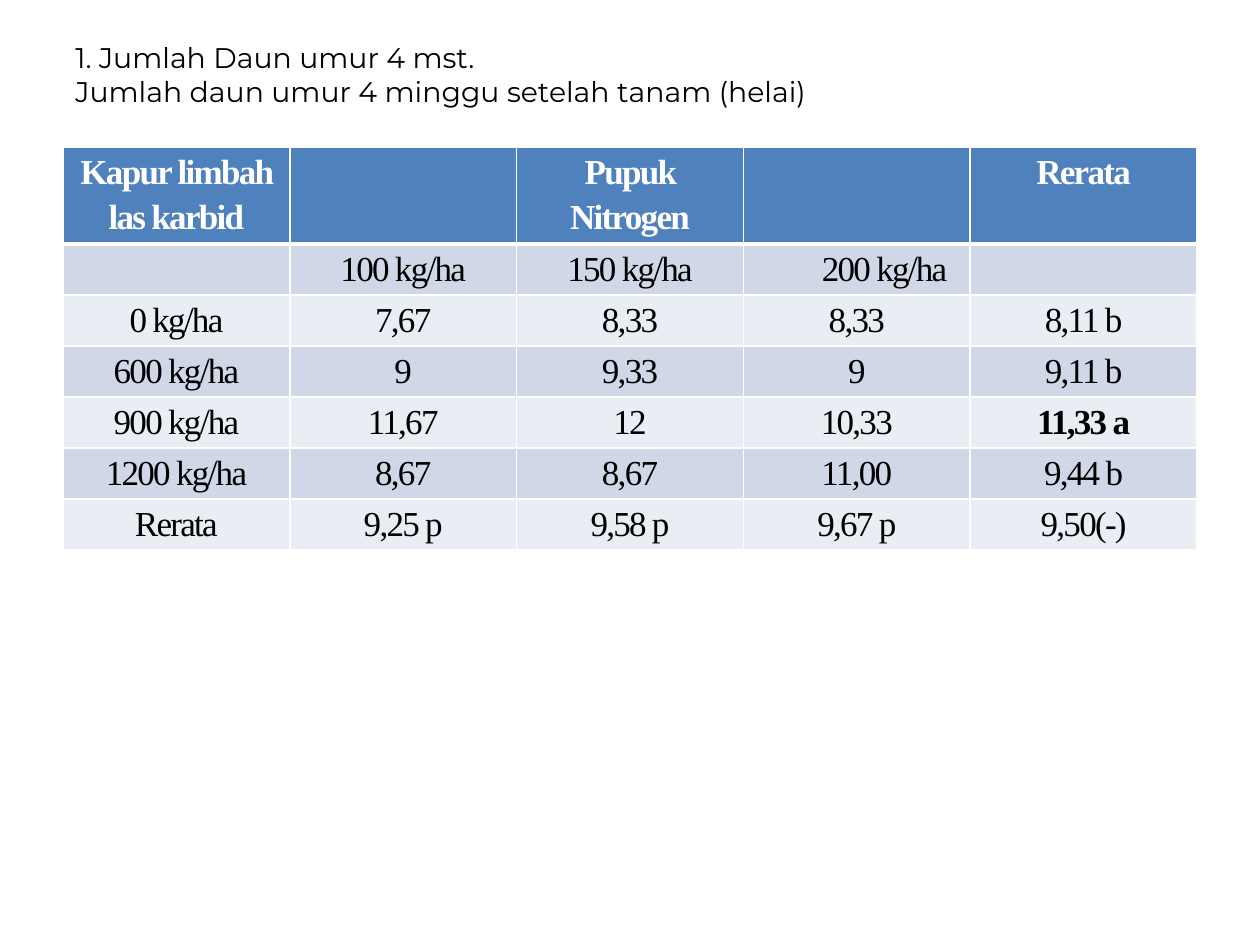
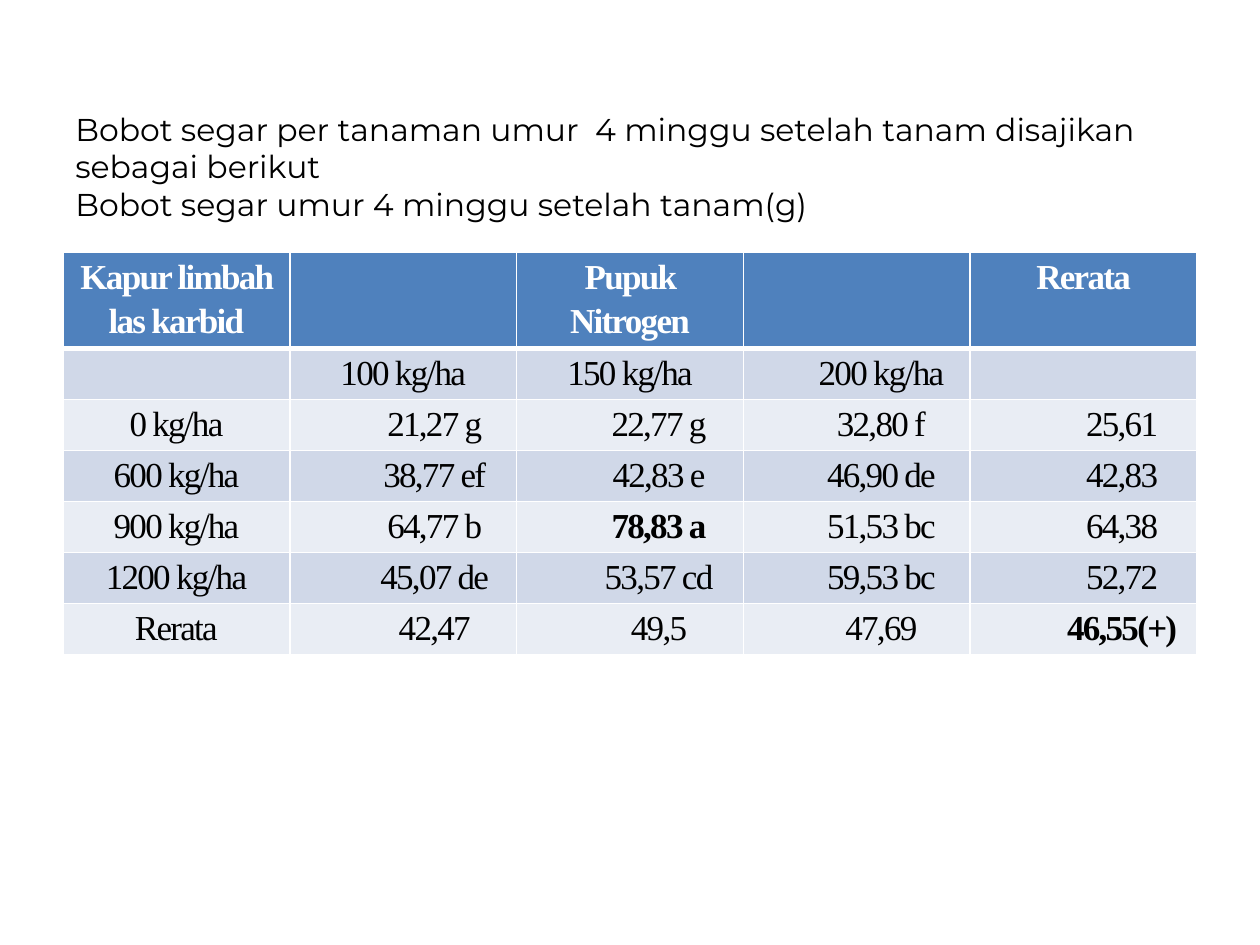
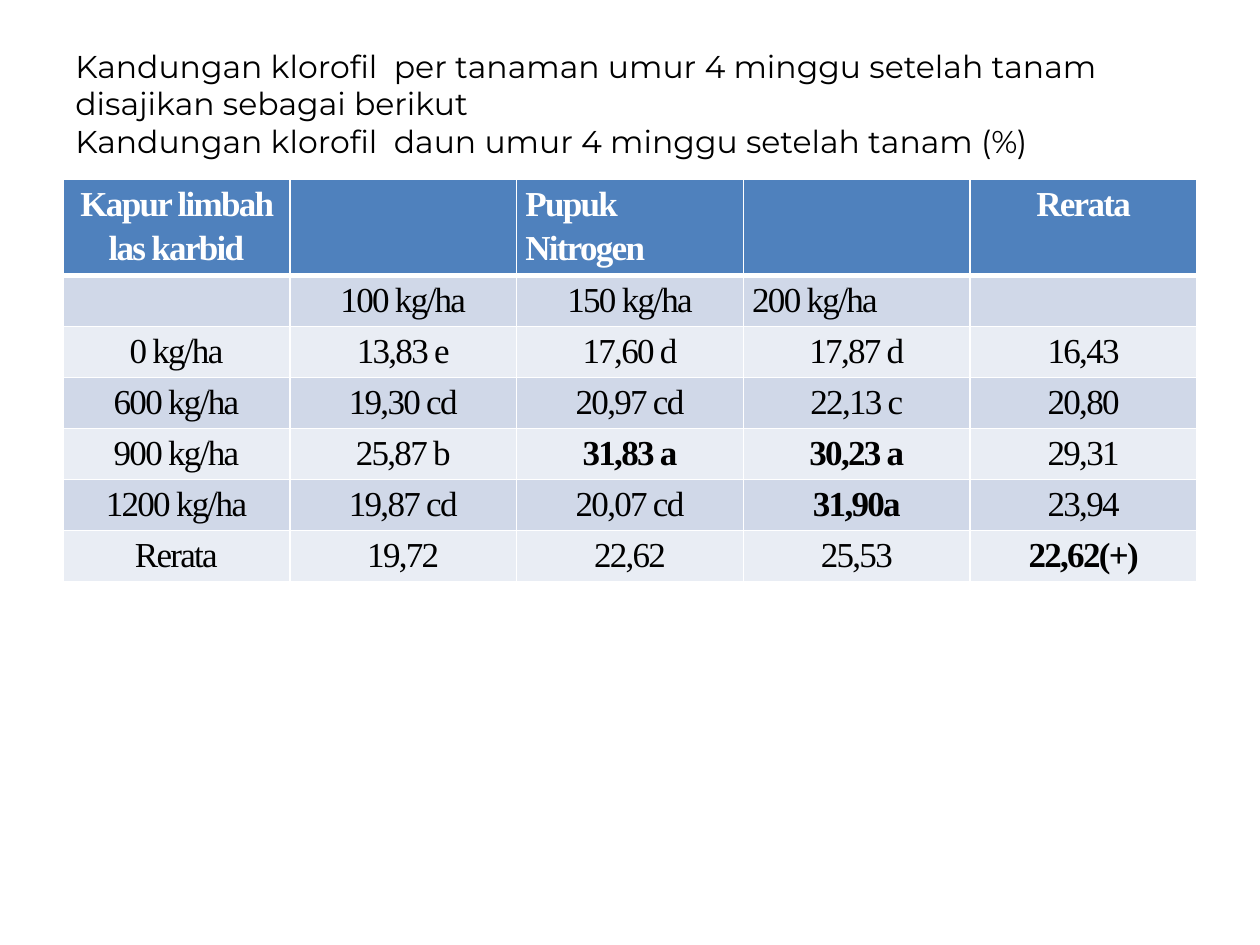
import pptx
import pptx.util
import pptx.dml.color
import pptx.enum.text
import pptx.oxml.ns
from lxml import etree

Inches = pptx.util.Inches
Pt = pptx.util.Pt
ALIGN = pptx.enum.text.PP_ALIGN
qn = pptx.oxml.ns.qn

COLORS = {"text": "000000", "white": "FFFFFF", "header": "4F81BD",
          "band_dark": "D0D8E8", "band_light": "E9EDF4"}

SLIDE_WIDTH, SLIDE_HEIGHT = 10, 7.5
MARGIN = 0.05 * SLIDE_WIDTH
CONTENT_WIDTH = SLIDE_WIDTH - 2 * MARGIN
COLUMN_COUNT = 5
HEADER_HEIGHT, TABLE_HEIGHT = 0.7, 3.13
CELL_MARGIN = 0.07

HEADER = ["Kapur limbah las karbid", "", "Pupuk Nitrogen", "", "Rerata"]
NITROGEN_DOSES = ["", "100 kg/ha", "150 kg/ha", "200 kg/ha", ""]
LIME_DOSES = ["0 kg/ha", "600 kg/ha", "900 kg/ha", "1200 kg/ha", "Rerata"]

# "dose_indent" moves the 200 kg/ha heading; "indents" move the value columns.
# "bold" and "justified" hold (row, column) positions in the table.
SLIDES = [
    {
        "title": "1. Jumlah Daun umur 4 mst.\vJumlah daun umur 4 minggu setelah tanam (helai)",
        "title_size": 16.2, "title_top": 0.3, "title_height": 0.87, "title_inset": 0.02,
        "table_top": 1.17, "dose_indent": 0.44, "indents": [0, 0, 0, 0],
        "bold": {(4, 4)}, "justified": set(),
        "values": [
            ["7,67", "8,33", "8,33", "8,11 b"],
            ["9", "9,33", "9", "9,11 b"],
            ["11,67", "12", "10,33", "11,33 a"],
            ["8,67", "8,67", "11,00", "9,44 b"],
            ["9,25 p", "9,58 p", "9,67 p", "9,50(-)"],
        ],
    },
    {
        "title": "Bobot segar per tanaman umur  4 minggu setelah tanam disajikan "
                 "sebagai berikut\vBobot segar umur 4 minggu setelah tanam(g)",
        "title_size": 18, "title_top": 0.58, "title_height": 1.17, "title_inset": 0.29,
        "table_top": 2, "dose_indent": 0.39, "indents": [0.5, 0.46, 0.39, 0.61],
        "bold": {(4, 2), (6, 4)}, "justified": set(),
        "values": [
            ["21,27 g", "22,77 g", "32,80 f", "25,61"],
            ["38,77 ef", "42,83 e", "46,90 de", "42,83"],
            ["64,77 b", "78,83 a", "51,53 bc", "64,38"],
            ["45,07 de", "53,57 cd", "59,53 bc", "52,72"],
            ["42,47", "49,5", "47,69", "46,55(+)"],
        ],
    },
    {
        "title": "Kandungan klorofil  per tanaman umur 4 minggu setelah tanam disajikan "
                 "sebagai berikut\vKandungan klorofil  daun umur 4 minggu setelah tanam (%)",
        "title_size": 18, "title_top": 0.3, "title_height": 1.03, "title_inset": 0.07,
        "table_top": 1.42, "dose_indent": 0, "indents": [0, 0, 0, 0],
        "bold": {(4, 2), (4, 3), (5, 3), (6, 4)}, "justified": {(0, 2), (1, 3)},
        "values": [
            ["13,83 e", "17,60 d", "17,87 d", "16,43"],
            ["19,30 cd", "20,97 cd", "22,13 c", "20,80"],
            ["25,87 b", "31,83 a", "30,23 a", "29,31"],
            ["19,87 cd", "20,07 cd", "31,90a", "23,94"],
            ["19,72", "22,62", "25,53", "22,62(+)"],
        ],
    },
]


def style_font(paragraph, name, size, color, bold=False):
    font = paragraph.font
    font.name, font.size, font.bold = name, Pt(size), bold
    font.color.rgb = pptx.dml.color.RGBColor.from_string(COLORS[color])


def add_borders(cell, row):
    """White cell lines, with a thick one below the header row."""
    properties = cell._tc.get_or_add_tcPr()
    thick_sides = {0: "lnB", 1: "lnT"}
    for position, side in enumerate(["lnL", "lnR", "lnT", "lnB"]):
        width = Pt(3 if thick_sides.get(row) == side else 1)
        line = etree.Element(qn(f"a:{side}"), w=str(width))
        fill = etree.SubElement(line, qn("a:solidFill"))
        etree.SubElement(fill, qn("a:srgbClr"), val=COLORS["white"])
        properties.insert(position, line)


presentation = pptx.Presentation()
presentation.slide_width = Inches(SLIDE_WIDTH)
presentation.slide_height = Inches(SLIDE_HEIGHT)

for content in SLIDES:
    slide = presentation.slides.add_slide(presentation.slide_layouts[6])

    title = slide.shapes.add_textbox(Inches(MARGIN), Inches(content["title_top"]),
                                     Inches(CONTENT_WIDTH), Inches(content["title_height"]))
    frame = title.text_frame
    frame.word_wrap = True
    frame.margin_top, frame.margin_bottom = Inches(content["title_inset"]), 0
    frame.text = content["title"]
    style_font(frame.paragraphs[0], "Montserrat", content["title_size"], "text")

    rows = [HEADER, NITROGEN_DOSES]
    rows += [[dose] + values for dose, values in zip(LIME_DOSES, content["values"])]
    table = slide.shapes.add_table(len(rows), COLUMN_COUNT, Inches(MARGIN),
                                   Inches(content["table_top"]), Inches(CONTENT_WIDTH),
                                   Inches(TABLE_HEIGHT)).table
    body_height = (TABLE_HEIGHT - HEADER_HEIGHT) / (len(rows) - 1)

    for row, texts in enumerate(rows):
        is_header = row == 0
        table.rows[row].height = Inches(HEADER_HEIGHT if is_header else body_height)
        band = "header" if is_header else "band_dark" if row % 2 else "band_light"
        for column, text in enumerate(texts):
            indent = 0
            if row > 1 and column > 0:
                indent = content["indents"][column - 1]
            elif (row, column) == (1, 3):
                indent = content["dose_indent"]

            cell = table.cell(row, column)
            cell.fill.solid()
            cell.fill.fore_color.rgb = pptx.dml.color.RGBColor.from_string(COLORS[band])
            add_borders(cell, row)
            cell.margin_left = Inches(CELL_MARGIN + indent)
            cell.margin_right = Inches(CELL_MARGIN)
            cell.margin_top = cell.margin_bottom = 0
            if not text:
                continue

            cell.text = text
            paragraph = cell.text_frame.paragraphs[0]
            is_justified = (row, column) in content["justified"]
            paragraph.alignment = ALIGN.JUSTIFY if is_justified else ALIGN.CENTER
            paragraph.line_spacing = 1.15
            style_font(paragraph, "Times New Roman", 20, "white" if is_header else "text",
                       is_header or (row, column) in content["bold"])
            paragraph._p.pPr.find(qn("a:defRPr")).set("spc", "-100")

presentation.save("out.pptx")
